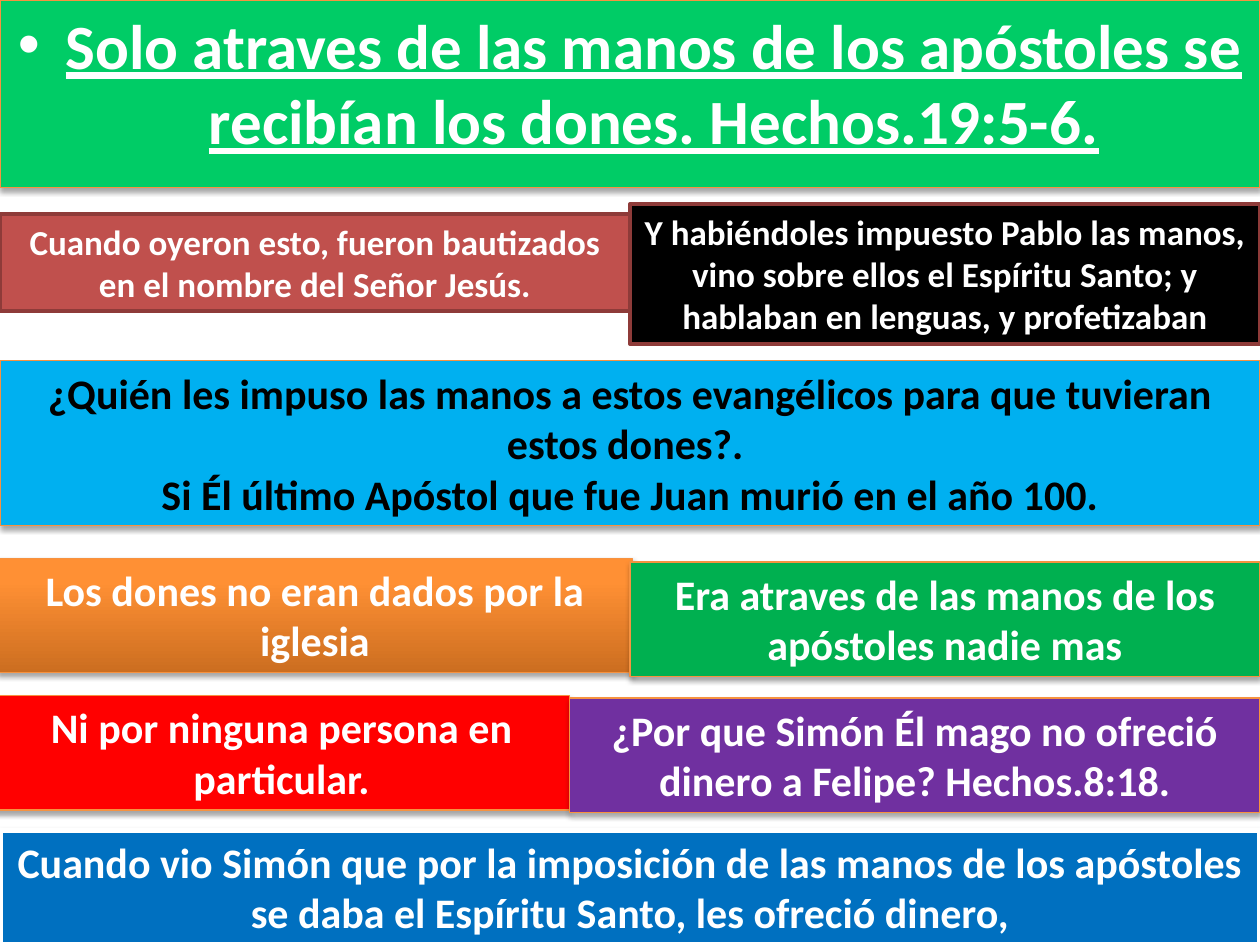
from pptx import Presentation, util as u
from pptx.dml.color import RGBColor
from pptx.enum import shapes, text
from pptx.oxml import parse_xml
from pptx.oxml.ns import nsdecls

HEX = {
    "mint": "00CC66", "brick": "C0504D", "black": "000000", "sky": "00B0F0",
    "amber": "FF9034", "rust": "CC6E20", "red": "FF0000", "green": "00B050",
    "purple": "7030A0", "blue": "0070C0", "white": "FFFFFF",
    "orange": "F69240", "maroon": "8E3B39",
}


def rgb(name):
    return RGBColor.from_string(HEX[name])


def shade(box, alpha=35, drop=1.8):
    """Soft shadow straight below the box."""
    box.shadow.inherit = False
    box._element.spPr.find("{*}effectLst").append(parse_xml(
        f'<a:outerShdw {nsdecls("a")} blurRad="{u.Pt(3.1)}" dist="{u.Pt(drop)}" '
        f'dir="5400000" rotWithShape="0"><a:srgbClr val="{HEX["black"]}">'
        f'<a:alpha val="{alpha * 1000}"/></a:srgbClr></a:outerShdw>'))


def blend(box, low, high):
    """Vertical gradient, from low at the bottom to high near the top."""
    box.fill.gradient()
    box.fill.gradient_angle = 90
    for stop, name, pos in zip(box.fill.gradient_stops, (low, high), (0, 0.8)):
        stop.color.rgb = rgb(name)
        stop.position = pos


def panel(slide, area, fill, lines, size=24, ink="white",
          edge="orange", width=0.75):
    box = slide.shapes.add_shape(shapes.MSO_SHAPE.RECTANGLE,
                                 *[u.Inches(v) for v in area])
    box.shadow.inherit = False
    box.fill.solid()
    box.fill.fore_color.rgb = rgb(fill)
    box.line.color.rgb = rgb(edge)
    box.line.width = u.Pt(width)
    frame = box.text_frame
    frame.word_wrap = True
    frame.vertical_anchor = text.MSO_ANCHOR.TOP
    frame.text = "\n".join(lines)
    for para in frame.paragraphs:
        para.alignment = text.PP_ALIGN.CENTER
        font = para.font
        font.name, font.size, font.bold = "Calibri", u.Pt(size), True
        font.color.rgb = rgb(ink)
    return box


def bullet(para, indent):
    props = para._p.get_or_add_pPr()
    props.set("marL", str(u.Inches(indent)))
    props.set("indent", str(-u.Inches(indent)))
    mark = parse_xml(f'<a:buChar {nsdecls("a")} char="•"/>')
    face = parse_xml(f'<a:buFont {nsdecls("a")} typeface="Arial"/>')
    props.find("{*}defRPr").addprevious(face)
    face.addnext(mark)


def main():
    deck = Presentation()
    deck.slide_width, deck.slide_height = u.Inches(10), u.Inches(7.5)
    slide = deck.slides.add_slide(deck.slide_layouts[6])

    # Heading
    head = panel(slide, (0, 0, 10, 1.49), "mint", [
        "Solo atraves de las manos de los apóstoles se recibían los dones. "
        "Hechos.19:5-6."], 36)
    shade(head)
    para = head.text_frame.paragraphs[0]
    para.font.underline = True
    para.space_before = u.Pt(7.2)
    bullet(para, 0.38)

    # Quoted verses
    for area, fill, line in (
        ((0, 1.7, 5, 0.77), "brick",
         "Cuando oyeron esto, fueron bautizados en el nombre del Señor Jesús."),
        ((5, 1.62, 5, 1.11), "black",
         "Y habiéndoles impuesto Pablo las manos, vino sobre ellos el "
         "Espíritu Santo; y hablaban en lenguas, y profetizaban"),
    ):
        panel(slide, area, fill, [line], 20, edge="maroon", width=2)

    # Question
    ask = panel(slide, (0, 2.86, 10, 1.31), "sky", [
        "¿Quién les impuso las manos a estos evangélicos para que tuvieran "
        "estos dones?. ",
        "Si Él último Apóstol que fue Juan murió en el año 100."], ink="black")
    ask.text_frame.vertical_anchor = text.MSO_ANCHOR.MIDDLE
    shade(ask)

    # Answers
    for area, fill, line in (
        ((-0.02, 4.43, 5.04, 0.91), "amber",
         "Los dones no eran dados por la iglesia"),
        ((-0.05, 5.52, 4.57, 0.91), "red",
         "Ni por ninguna persona en particular."),
        ((5, 4.46, 5, 0.91), "green",
         "Era atraves de las manos de los apóstoles nadie mas"),
        ((4.52, 5.54, 5.48, 0.91), "purple",
         "¿Por que Simón Él mago no ofreció dinero a Felipe? Hechos.8:18."),
    ):
        box = panel(slide, area, fill, [line])
        shade(box)
        if fill == "amber":
            blend(box, "rust", "amber")

    # Closing verse
    end = panel(slide, (0, 6.59, 10, 0.91), "blue", [
        "Cuando vio Simón que por la imposición de las manos de los apóstoles "
        "se daba el Espíritu Santo, les ofreció dinero,"],
        edge="white", width=3)
    shade(end, 38, 1.6)

    deck.save("out.pptx")


if __name__ == "__main__":
    main()
